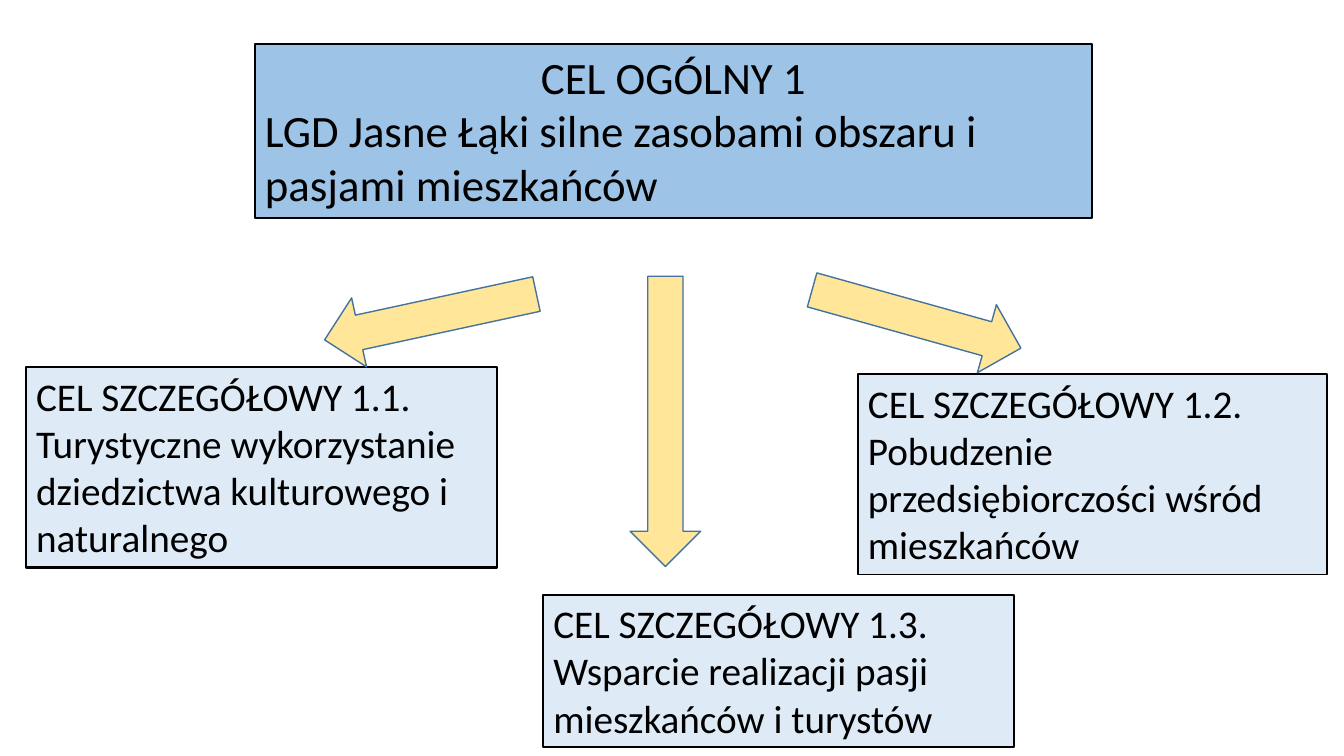
from pptx import Presentation
from pptx.dml.color import RGBColor
from pptx.enum import shapes, text
from pptx.util import Inches, Pt

BLACK = RGBColor(0x00, 0x00, 0x00)
BLUE = RGBColor(0x9D, 0xC3, 0xE6)
PALE = RGBColor(0xDE, 0xEB, 0xF7)
SAND = RGBColor(0xFF, 0xE6, 0x99)
EDGE = RGBColor(0x43, 0x73, 0x9E)


def add_shape(slide, kind, place, fill, line, width):
    shape = slide.shapes.add_shape(kind, *map(Inches, place))
    shape.shadow.inherit = False
    shape.fill.solid()
    shape.fill.fore_color.rgb = fill
    shape.line.color.rgb = line
    shape.line.width = Pt(width)
    return shape


def add_goal(slide, place, title, body, fill=PALE, size=28, width=1.5,
             align=text.PP_ALIGN.LEFT):
    box = add_shape(slide, shapes.MSO_SHAPE.RECTANGLE, place, fill, BLACK, width)
    frame = box.text_frame
    frame.word_wrap = True
    frame.auto_size = text.MSO_AUTO_SIZE.SHAPE_TO_FIT_TEXT
    frame.vertical_anchor = text.MSO_ANCHOR.TOP
    head, main_par = frame.paragraphs[0], frame.add_paragraph()
    head.alignment = align
    main_par.alignment = text.PP_ALIGN.LEFT
    for par, words in ((head, title), (main_par, body)):
        run = par.add_run()
        run.text = words
        run.font.name = "Calibri"
        run.font.size = Pt(size)
        run.font.color.rgb = BLACK


def add_arrow(slide, place, turn=0):
    arrow = add_shape(slide, shapes.MSO_SHAPE.DOWN_ARROW, place, SAND, EDGE, 1)
    arrow.rotation = turn


def main():
    deck = Presentation()
    deck.slide_width = Inches(13.33)
    deck.slide_height = Inches(7.5)
    slide = deck.slides.add_slide(deck.slide_layouts[6])

    add_goal(slide, (2.53, 0.44, 8.3, 1.72), "CEL OGÓLNY 1",
             "LGD Jasne Łąki silne zasobami obszaru i pasjami mieszkańców",
             BLUE, 32, align=text.PP_ALIGN.CENTER)
    add_goal(slide, (0.26, 3.64, 4.67, 1.99), "CEL SZCZEGÓŁOWY 1.1.",
             "Turystyczne wykorzystanie dziedzictwa kulturowego i naturalnego")
    add_goal(slide, (8.51, 3.71, 4.65, 1.99), "CEL SZCZEGÓŁOWY 1.2.",
             "Pobudzenie przedsiębiorczości wśród mieszkańców", width=1)
    add_goal(slide, (5.39, 5.9, 4.67, 1.51), "CEL SZCZEGÓŁOWY 1.3.",
             "Wsparcie realizacji pasji mieszkańców i turystów")

    add_arrow(slide, (3.92, 2.07, 0.7, 2.15), 77.8)
    add_arrow(slide, (8.74, 2.09, 0.7, 2.15), 285.6)
    add_arrow(slide, (6.25, 2.74, 0.7, 2.88))

    deck.save("out.pptx")


if __name__ == "__main__":
    main()
